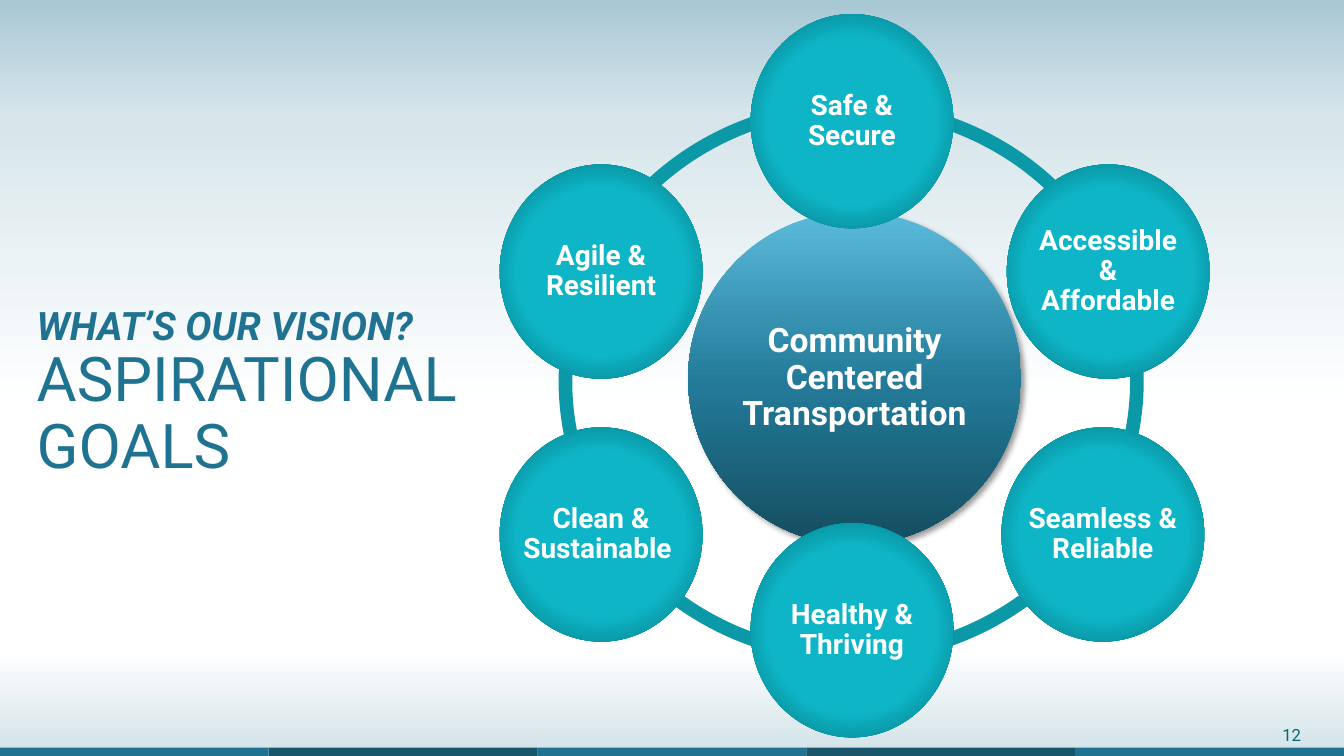
from lxml import etree
from pptx import Presentation
from pptx.dml.color import RGBColor
from pptx.enum.shapes import MSO_SHAPE
from pptx.enum.text import MSO_ANCHOR, MSO_AUTO_SIZE, PP_ALIGN
from pptx.oxml import parse_xml
from pptx.util import Pt

FONT = "Roboto"
WHITE = RGBColor(0xFF, 0xFF, 0xFF)
BLUE = RGBColor(0x20, 0x73, 0x90)
DARK_BLUE = RGBColor(0x18, 0x56, 0x6C)
NUMBER_TEAL = RGBColor(0x08, 0x66, 0x70)
RING_TEAL = RGBColor(0x0B, 0x98, 0xA7)
GOAL_TEAL = RGBColor(0x0D, 0xB5, 0xC6)
GOAL_EDGE = RGBColor(0x0A, 0x8E, 0x9C)
HUB_DARK = RGBColor(0x15, 0x4D, 0x60)
HUB_MIDDLE = RGBColor(0x22, 0x7A, 0x98)
HUB_LIGHT = RGBColor(0x5B, 0xBA, 0xDB)
TINT_18 = RGBColor(0xD7, 0xE6, 0xEB)
TINT_22 = RGBColor(0xCE, 0xE0, 0xE7)
TINT_39 = RGBColor(0xA8, 0xC8, 0xD4)

WIDTH, HEIGHT = 960, 540
QUESTION = "WHAT’S OUR VISION? "
HEADING = "ASPIRATIONAL GOALS"
PAGE_NUMBER = "12"
HUB_TEXT = "Community\vCentered\vTransportation"
# label, centre x, centre y
GOALS = [
    ("Safe &\vSecure", 608.6, 86.6),
    ("Accessible\v&\vAffordable", 791.6, 194),
    ("Seamless &\vReliable", 787.8, 381.8),
    ("Healthy &\vThriving", 608.6, 450.2),
    ("Clean &\vSustainable ", 429.4, 381.8),
    ("Agile &\vResilient", 429.4, 194),
]
GOAL_SIZE = (144.8, 153)
HUB_CENTRE, HUB_SIZE = (610.4, 270.2), (237.8, 237.8)
RING_CENTRE, RING_SIZE = (608, 272.5), (408.2, 392.4)
FOOTER_COLOURS = [BLUE, DARK_BLUE, BLUE, DARK_BLUE, BLUE]
FOOTER_TOP = 534

HUB_STOPS = [(0, HUB_LIGHT), (52, HUB_MIDDLE), (100, HUB_DARK)]
GOAL_STOPS = [(0, GOAL_TEAL), (57, GOAL_TEAL), (79, GOAL_EDGE), (100, GOAL_EDGE)]
TOP_STOPS = [(0, TINT_39), (29, TINT_18), (100, WHITE)]
BOTTOM_STOPS = [(0, WHITE), (8, WHITE), (88, TINT_18), (100, TINT_22)]

NAMESPACE = "http://schemas.openxmlformats.org/drawingml/2006/main"
DOWNWARD = '<a:lin ang="5400000" scaled="0"/>'
RADIAL = ('<a:path path="circle"><a:fillToRect l="50000" t="50000" '
          'r="50000" b="50000"/></a:path>')


def add_plain_shape(slide, kind, left, top, width, height, colour=None):
    """Add a preset shape without line or shadow."""
    shape = slide.shapes.add_shape(kind, Pt(left), Pt(top), Pt(width), Pt(height))
    shape.shadow.inherit = False
    shape.line.fill.background()
    if colour is None:
        shape.fill.background()
    else:
        shape.fill.solid()
        shape.fill.fore_color.rgb = colour
    return shape


def add_circle(slide, centre, size):
    left, top = (middle - length / 2 for middle, length in zip(centre, size))
    return add_plain_shape(slide, MSO_SHAPE.OVAL, left, top, *size)


def set_gradient(shape, stops, direction=DOWNWARD):
    stop_xml = "".join(
        f'<a:gs pos="{position * 1000}"><a:srgbClr val="{colour}"/></a:gs>'
        for position, colour in stops)
    gradient = parse_xml(
        f'<a:gradFill xmlns:a="{NAMESPACE}" rotWithShape="1">'
        f'<a:gsLst>{stop_xml}</a:gsLst>{direction}</a:gradFill>')
    properties = shape._element.spPr
    old_fill = properties.find(f"{{{NAMESPACE}}}noFill")
    properties.replace(old_fill, gradient)


def add_soft_shadow(shape):
    effects = shape._element.spPr.find(f"{{{NAMESPACE}}}effectLst")
    shadow = etree.SubElement(
        effects, f"{{{NAMESPACE}}}outerShdw", blurRad=str(Pt(4)),
        dist=str(Pt(3)), dir="2700000", algn="tl", rotWithShape="0")
    colour = etree.SubElement(shadow, f"{{{NAMESPACE}}}srgbClr", val="000000")
    etree.SubElement(colour, f"{{{NAMESPACE}}}alpha", val="40000")


def write_text(shape, *parts, align=PP_ALIGN.CENTER, wrap=False, spacing=0.9):
    """Write (text, size, colour, bold, italic) parts; \\v breaks the line."""
    frame = shape.text_frame
    frame.auto_size = MSO_AUTO_SIZE.NONE
    frame.word_wrap = wrap
    frame.vertical_anchor = MSO_ANCHOR.MIDDLE
    paragraph = frame.paragraphs[0]
    paragraph.alignment = align
    paragraph.line_spacing = spacing
    for text, size, colour, bold, italic in parts:
        for index, line in enumerate(text.split("\v")):
            if index:
                paragraph.add_line_break()
            if not line:
                continue
            run = paragraph.add_run()
            run.text = line
            run.font.name = FONT
            run.font.size = Pt(size)
            run.font.color.rgb = colour
            run.font.bold = bold
            run.font.italic = italic


def add_background(slide):
    top_band = add_plain_shape(slide, MSO_SHAPE.RECTANGLE, 0, 0, WIDTH, 291)
    set_gradient(top_band, TOP_STOPS)
    bottom_band = add_plain_shape(slide, MSO_SHAPE.RECTANGLE, 0, 457, WIDTH, 83)
    set_gradient(bottom_band, BOTTOM_STOPS)
    step = WIDTH / len(FOOTER_COLOURS)
    for index, colour in enumerate(FOOTER_COLOURS):
        add_plain_shape(slide, MSO_SHAPE.RECTANGLE, index * step, FOOTER_TOP,
                        step, HEIGHT - FOOTER_TOP, colour)
    number = slide.shapes.add_textbox(Pt(885.6), Pt(514), Pt(74.2), Pt(21.8))
    write_text(number, (PAGE_NUMBER, 12, NUMBER_TEAL, False, False), spacing=1)


def add_title(slide):
    """Fill the title placeholder and bring it in front of the background."""
    title = slide.shapes.title
    title.left, title.top, title.width, title.height = Pt(19), Pt(195), Pt(360), Pt(173)
    write_text(title, (QUESTION + "\v", 28, BLUE, True, True),
               (HEADING, 44, BLUE, False, False), align=PP_ALIGN.LEFT, wrap=True)
    slide.shapes._spTree.append(title._element)


def add_goal_wheel(slide):
    ring = add_circle(slide, RING_CENTRE, RING_SIZE)
    ring.line.color.rgb = RING_TEAL
    ring.line.width = Pt(9.75)
    hub = add_circle(slide, HUB_CENTRE, HUB_SIZE)
    set_gradient(hub, HUB_STOPS)
    add_soft_shadow(hub)
    write_text(hub, (HUB_TEXT, 24, WHITE, True, False))
    for label, *centre in GOALS:
        goal = add_circle(slide, centre, GOAL_SIZE)
        set_gradient(goal, GOAL_STOPS, RADIAL)
        write_text(goal, (label, 20, WHITE, True, False))


def main():
    presentation = Presentation()
    presentation.slide_width, presentation.slide_height = Pt(WIDTH), Pt(HEIGHT)
    slide = presentation.slides.add_slide(presentation.slide_layouts[5])
    add_background(slide)
    add_title(slide)
    add_goal_wheel(slide)
    presentation.save("out.pptx")


if __name__ == "__main__":
    main()
